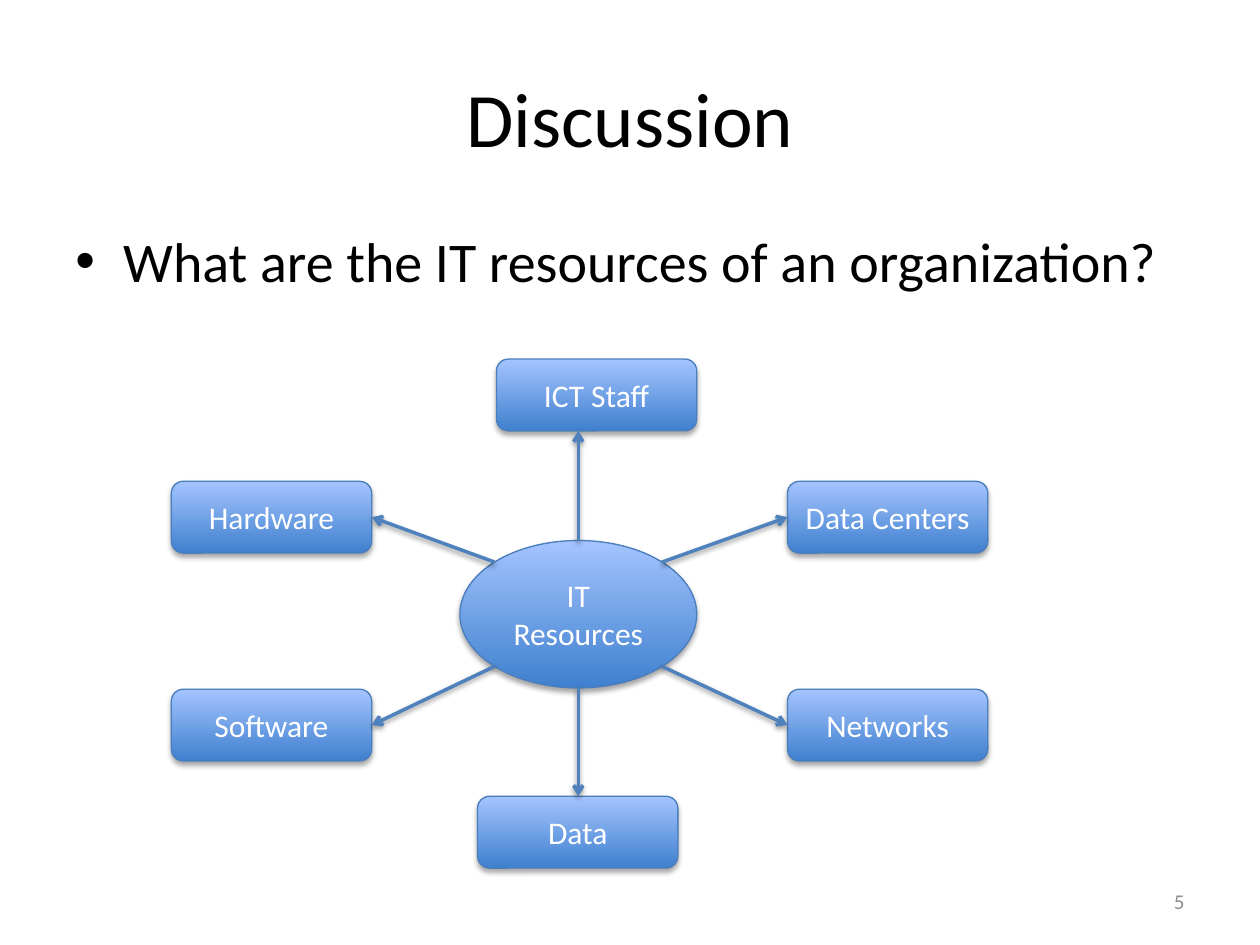
from math import cos, pi, sin
from lxml import etree
from pptx import Presentation, util as u
from pptx.dml.color import RGBColor
from pptx.enum import shapes, text
from pptx.oxml.ns import qn

BLACK = RGBColor(0x00, 0x00, 0x00)
WHITE = RGBColor(0xFF, 0xFF, 0xFF)
GREY = RGBColor(0x8C, 0x8C, 0x8C)
DEEP_BLUE = RGBColor(0x3F, 0x80, 0xCE)
PALE_BLUE = RGBColor(0xA4, 0xC4, 0xFF)
EDGE_BLUE = RGBColor(0x4B, 0x7E, 0xBC)
ARROW_BLUE = RGBColor(0x4F, 0x81, 0xBD)


def write(frame, words, size, color, align, anchor=text.MSO_ANCHOR.MIDDLE):
    frame.word_wrap = True
    frame.vertical_anchor = anchor
    paragraph = frame.paragraphs[0]
    paragraph.alignment = align
    run = paragraph.add_run()
    run.text = words
    run.font.size = u.Pt(size)
    run.font.name = "Calibri"
    run.font.color.rgb = color
    return paragraph


def cast_shadow(owner, opacity, distance):
    effects = etree.SubElement(owner._element.spPr, qn("a:effectLst"))
    shadow = etree.SubElement(effects, qn("a:outerShdw"), blurRad=str(u.Pt(3.1)),
                              dist=str(u.Pt(distance)), dir="5400000", rotWithShape="0")
    black = etree.SubElement(shadow, qn("a:srgbClr"), val=str(BLACK))
    etree.SubElement(black, qn("a:alpha"), val=str(opacity * 1000))


deck = Presentation()
deck.slide_width, deck.slide_height = u.Inches(10), u.Inches(7.5)
slide = deck.slides.add_slide(deck.slide_layouts[5])

margin, content_width = u.Inches(0.5), u.Inches(9)
title = slide.shapes.title
title.left, title.top = margin, u.Inches(0.3)
title.width, title.height = content_width, u.Inches(1.25)
write(title.text_frame, "Discussion", 44, BLACK, text.PP_ALIGN.CENTER)

question = slide.shapes.add_textbox(margin, u.Inches(1.75), content_width, u.Inches(4.95))
bullet_line = write(question.text_frame, "What are the IT resources of an organization?",
                    32, BLACK, text.PP_ALIGN.LEFT, text.MSO_ANCHOR.TOP)
bullet_line.space_before = u.Pt(6.4)
bullet = bullet_line._p.get_or_add_pPr()
bullet.set("marL", str(u.Inches(0.38)))
bullet.set("indent", str(u.Inches(-0.38)))
etree.SubElement(bullet, qn("a:buFont"), typeface="Arial")
etree.SubElement(bullet, qn("a:buChar"), char="•")

hub_x, hub_y, hub_width, hub_height = 4.59, 4.875, 1.88, 1.17
box_width, box_height = 1.59, 0.57
left_column, right_column = 1.36, 6.25
upper_row, lower_row = 3.82, 5.47
ELLIPSE = shapes.MSO_SHAPE.OVAL
BOX = shapes.MSO_SHAPE.ROUNDED_RECTANGLE

resources = [
    ("Hardware", left_column, upper_row, 225),
    ("Software", left_column, lower_row, 135),
    ("Data", 3.79, 6.32, 90),
    ("Networks", right_column, lower_row, 45),
    ("Data Centers", right_column, upper_row, 315),
    ("ICT Staff", 3.94, 2.85, 270),
]
nodes = [("IT Resources", ELLIPSE, hub_x - hub_width / 2, hub_y - hub_height / 2,
          hub_width, hub_height)]
nodes += [(name, BOX, x, y, box_width, box_height) for name, x, y, angle in resources]

for name, outline, *frame in nodes:
    node = slide.shapes.add_shape(outline, *map(u.Inches, frame))
    node.fill.gradient()
    node.fill.gradient_angle = 90
    for stop, color in zip(node.fill.gradient_stops, (DEEP_BLUE, PALE_BLUE)):
        stop.color.rgb = color
    node.line.color.rgb = EDGE_BLUE
    node.line.width = u.Pt(0.75)
    cast_shadow(node, 35, 1.8)
    write(node.text_frame, name, 18, WHITE, text.PP_ALIGN.CENTER)

for name, x, y, angle in resources:
    across, down = cos(angle * pi / 180), sin(angle * pi / 180)
    start = hub_x + across * hub_width / 2, hub_y + down * hub_height / 2
    if angle % 180 == 90:
        end = hub_x, y if down > 0 else y + box_height
    else:
        end = x if across > 0 else x + box_width, y + box_height / 2
    arrow = slide.shapes.add_connector(shapes.MSO_CONNECTOR.STRAIGHT,
                                       *map(u.Inches, start + end))
    arrow.line.color.rgb = ARROW_BLUE
    arrow.line.width = u.Pt(2)
    etree.SubElement(arrow.line._get_or_add_ln(), qn("a:tailEnd"), type="arrow")
    cast_shadow(arrow, 38, 1.6)

page_number = slide.shapes.add_textbox(u.Inches(7.17), u.Inches(6.95),
                                       u.Inches(2.33), u.Inches(0.4))
write(page_number.text_frame, "5", 12, GREY, text.PP_ALIGN.RIGHT)

deck.save("out.pptx")
